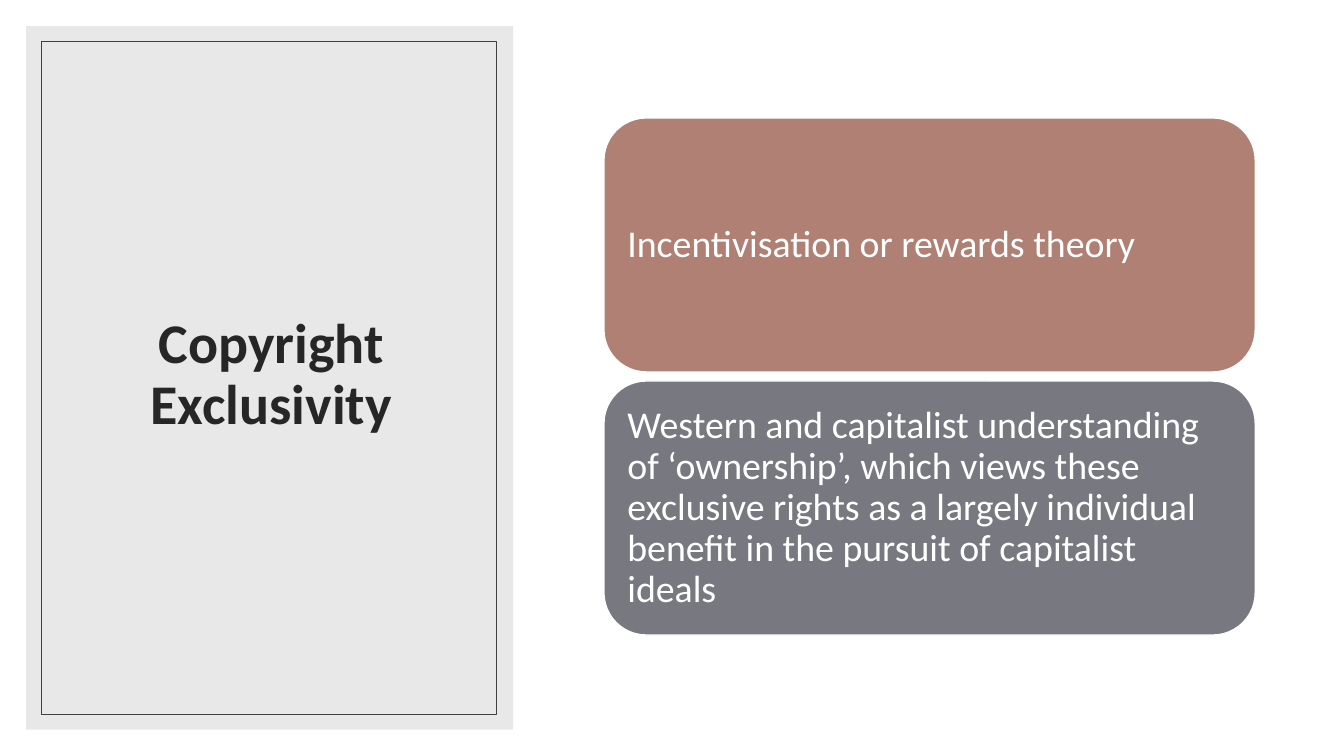
"""Build the Copyright Exclusivity slide."""
from pptx import Presentation
from pptx.dml.color import RGBColor
from pptx.enum import shapes, text
from pptx.util import Inches, Pt

TITLE = "Copyright Exclusivity"
CARDS = [
    ("Incentivisation or rewards theory", "clay"),
    ("Western and capitalist understanding of ‘ownership’, which views these "
     "exclusive rights as a largely individual benefit in the pursuit of "
     "capitalist ideals", "slate"),
]
COLORS = {"panel": "E8E8E8", "frame": "404040", "title": "262626",
          "clay": "AF8073", "slate": "787880", "white": "FFFFFF"}
LEFT, TOP, WIDTH, HEIGHT, STEP = 5.99, 1.17, 6.46, 2.52, 2.61
KIND = shapes.MSO_SHAPE


def rgb(name):
    """Look up a named colour."""
    return RGBColor.from_string(COLORS[name])


def add_box(slide, kind, box, fill=None, line=None, width=1):
    """Add a flat shape with an optional fill and line."""
    shape = slide.shapes.add_shape(kind, *map(Inches, box))
    shape.shadow.inherit = False
    if fill:
        shape.fill.solid()
        shape.fill.fore_color.rgb = rgb(fill)
    else:
        shape.fill.background()
    if line:
        shape.line.color.rgb = rgb(line)
        shape.line.width = Pt(width)
    else:
        shape.line.fill.background()
    return shape


def set_text(shape, words, size, color, align, inset, bold=False):
    """Write one paragraph, centred vertically."""
    frame = shape.text_frame
    frame.text = words
    frame.word_wrap = True
    frame.auto_size = text.MSO_AUTO_SIZE.NONE
    frame.vertical_anchor = text.MSO_ANCHOR.MIDDLE
    frame.margin_left = frame.margin_right = Inches(inset)
    frame.margin_top = frame.margin_bottom = Inches(inset)
    para = frame.paragraphs[0]
    para.alignment = align
    para.line_spacing = 0.9
    font = para.font
    font.name, font.size, font.bold = "Calibri", Pt(size), bold
    font.color.rgb = rgb(color)


def main():
    """Lay out the slide and save it."""
    deck = Presentation()
    deck.slide_width, deck.slide_height = Inches(13.33), Inches(7.5)
    slide = deck.slides.add_slide(deck.slide_layouts[5])

    panel = add_box(slide, KIND.RECTANGLE, (0.26, 0.26, 4.83, 6.98), "panel")
    title = slide.shapes.title
    title.left, title.top = Inches(0.63), Inches(0.61)
    title.width, title.height = Inches(4.12), Inches(6.24)
    set_text(title, TITLE, 40, "title", text.PP_ALIGN.CENTER, 0.1, True)
    panel._element.addnext(title._element)
    add_box(slide, KIND.RECTANGLE, (0.41, 0.41, 4.51, 6.68),
            line="frame", width=0.5)

    for row, (words, fill) in enumerate(CARDS):
        box = (LEFT, TOP + row * STEP, WIDTH, HEIGHT)
        card = add_box(slide, KIND.ROUNDED_RECTANGLE, box, fill, "white")
        set_text(card, words, 27, "white", text.PP_ALIGN.LEFT, 0.11)

    deck.save("out.pptx")


if __name__ == "__main__":
    main()
